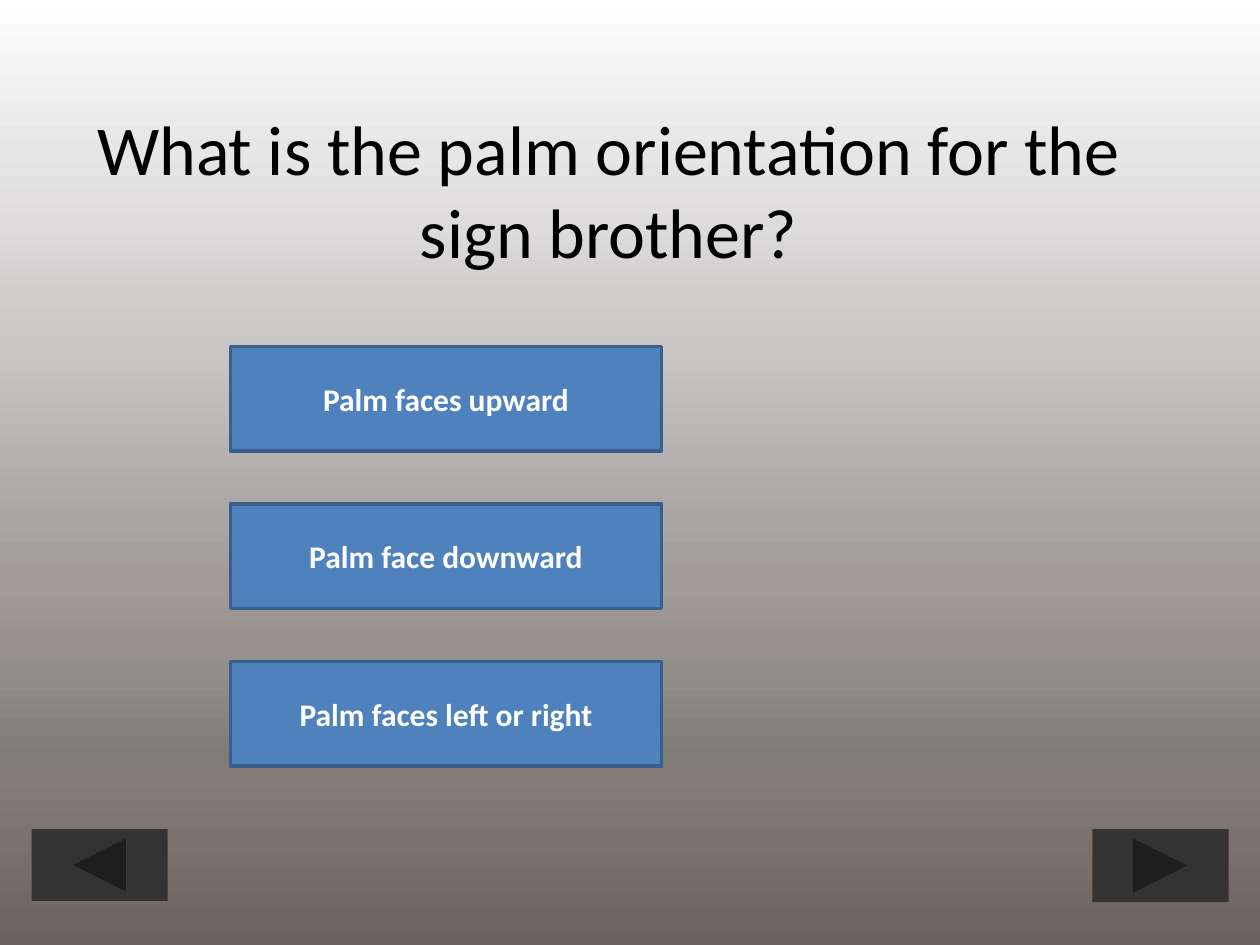
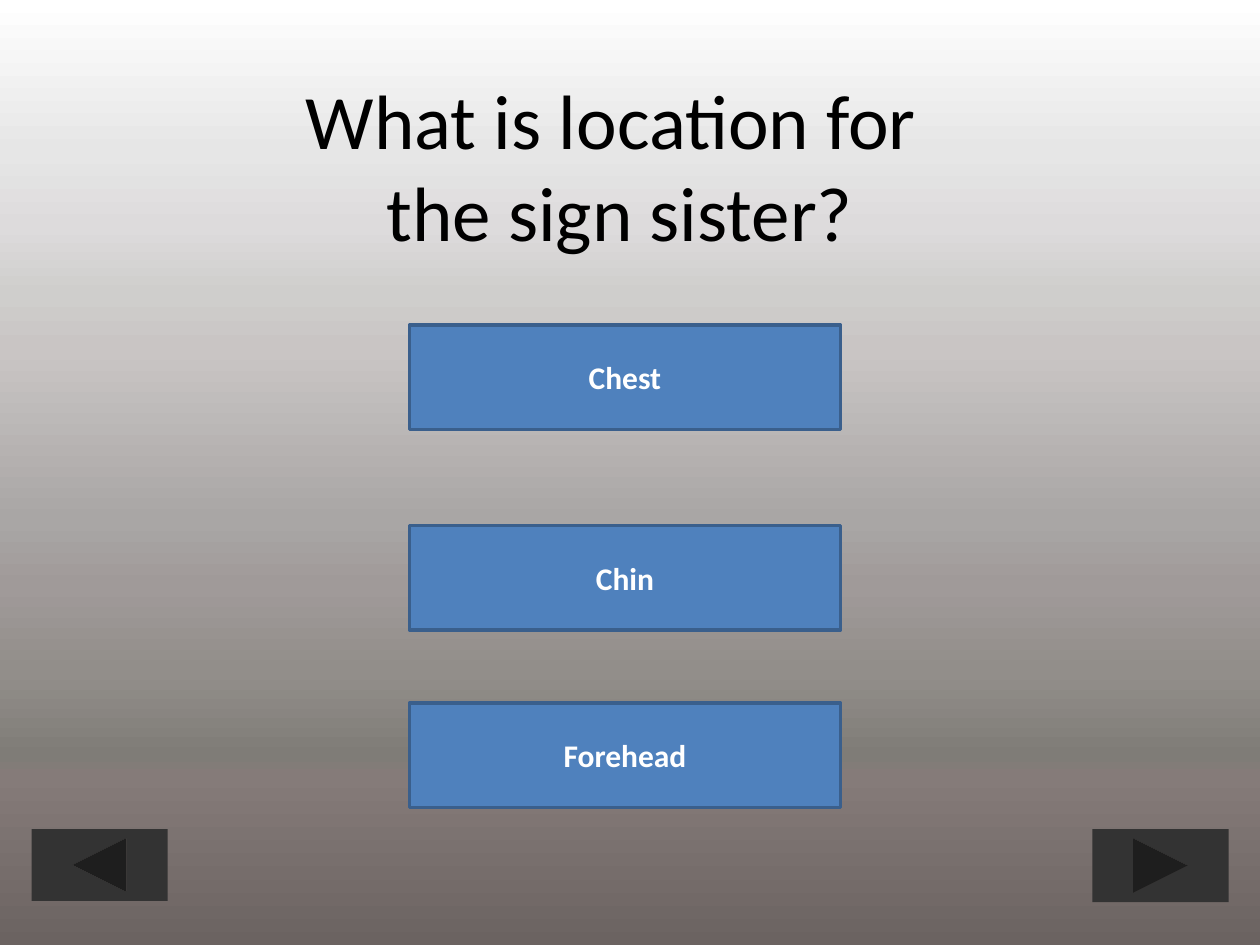
from copy import deepcopy

from pptx import Presentation
from pptx.dml.color import RGBColor
from pptx.enum import shapes, text
from pptx.oxml.ns import qn
from pptx.util import Inches, Pt

FONT = "Calibri"
COLORS = {
    "question": "000000",
    "answer": "4F81BD",
    "answer_edge": "3A5F8C",
    "answer_text": "FFFFFF",
    "navigation": "333333",
}
# Background gradient, top to bottom: percent and colour
BACKDROP = [(0, "FFFFFF"), (16, "E6E6E6"), (24, "DDDBDC"), (31, "CFCECC"),
            (37, "C9C5C4"), (55, "A9A6A5"), (62, "A09A99"), (71, "928E8A"),
            (80, "7F7C77"), (82, "857B79"), (100, "6B6361")]
ANSWER_SIZE = (3.42, 0.83)
KIND = shapes.MSO_SHAPE


def color(name):
    return RGBColor.from_string(COLORS[name])


def set_backdrop(master):
    fill = master.background.fill
    fill.gradient()
    fill.gradient_angle = 270
    stops = master.element.find(".//" + qn("p:bg")).find(".//" + qn("a:gsLst"))
    for _ in range(len(BACKDROP) - len(stops)):
        stops.append(deepcopy(stops[0]))
    for stop, (percent, hex_color) in zip(fill.gradient_stops, BACKDROP):
        stop.position = percent / 100
        stop.color.rgb = RGBColor.from_string(hex_color)


def add_run(paragraph, words, size, color_name, bold=False):
    run = paragraph.add_run()
    run.text = words
    run.font.name = FONT
    run.font.size = Pt(size)
    run.font.bold = bold
    run.font.color.rgb = color(color_name)


def add_question(slide, lines, box, size):
    question = slide.shapes.title
    question.left, question.top, question.width, question.height = map(Inches, box)
    frame = question.text_frame
    frame.word_wrap = True
    frame.auto_size = text.MSO_AUTO_SIZE.NONE
    frame.vertical_anchor = text.MSO_ANCHOR.MIDDLE
    paragraph = frame.paragraphs[0]
    paragraph.alignment = text.PP_ALIGN.CENTER
    for number, line in enumerate(lines):
        if number:
            paragraph.add_line_break()
        add_run(paragraph, line, size, "question")


def add_button(slide, kind, box, fill_name):
    button = slide.shapes.add_shape(kind, *map(Inches, box))
    button.shadow.inherit = False
    button.fill.solid()
    button.fill.fore_color.rgb = color(fill_name)
    button.line.fill.background()
    return button


def add_answer(slide, words, left, top):
    answer = add_button(slide, KIND.ACTION_BUTTON_CUSTOM,
                        (left, top, *ANSWER_SIZE), "answer")
    answer.line.color.rgb = color("answer_edge")
    answer.line.width = Pt(2)
    frame = answer.text_frame
    frame.word_wrap = True
    frame.vertical_anchor = text.MSO_ANCHOR.MIDDLE
    paragraph = frame.paragraphs[0]
    paragraph.alignment = text.PP_ALIGN.CENTER
    add_run(paragraph, words, 18, "answer_text", bold=True)


def add_navigation(slide):
    add_button(slide, KIND.ACTION_BUTTON_FORWARD_OR_NEXT,
               (8.67, 6.58, 1.08, 0.58), "navigation")
    add_button(slide, KIND.ACTION_BUTTON_BACK_OR_PREVIOUS,
               (0.25, 6.58, 1.08, 0.57), "navigation")


def add_quiz_slide(prs, lines, box, size, answers, left, tops):
    slide = prs.slides.add_slide(prs.slide_layouts[0])
    subtitle = slide.placeholders[1].element
    subtitle.getparent().remove(subtitle)
    add_question(slide, lines, box, size)
    for words, top in zip(answers, tops):
        add_answer(slide, words, left, top)
    add_navigation(slide)


def main():
    prs = Presentation()
    prs.slide_width, prs.slide_height = Inches(10), Inches(7.5)
    set_backdrop(prs.slide_master)

    # Palm orientation of "brother"
    add_quiz_slide(
        prs, ["What is the palm orientation for the sign brother?"],
        (0.58, 0.5, 8.5, 2), 40,
        ["Palm faces upward", "Palm face downward", "Palm faces left or right"],
        1.83, [2.75 + 1.25 * row for row in range(3)])

    # Location of "sister"
    add_quiz_slide(
        prs, ["What is location for ", "the sign sister?"],
        (0.67, 0.5, 8.5, 1.61), 44,
        ["Chest", "Chin", "Forehead"],
        3.25, [2.58, 4.17, 5.58])

    prs.save("out.pptx")


if __name__ == "__main__":
    main()
